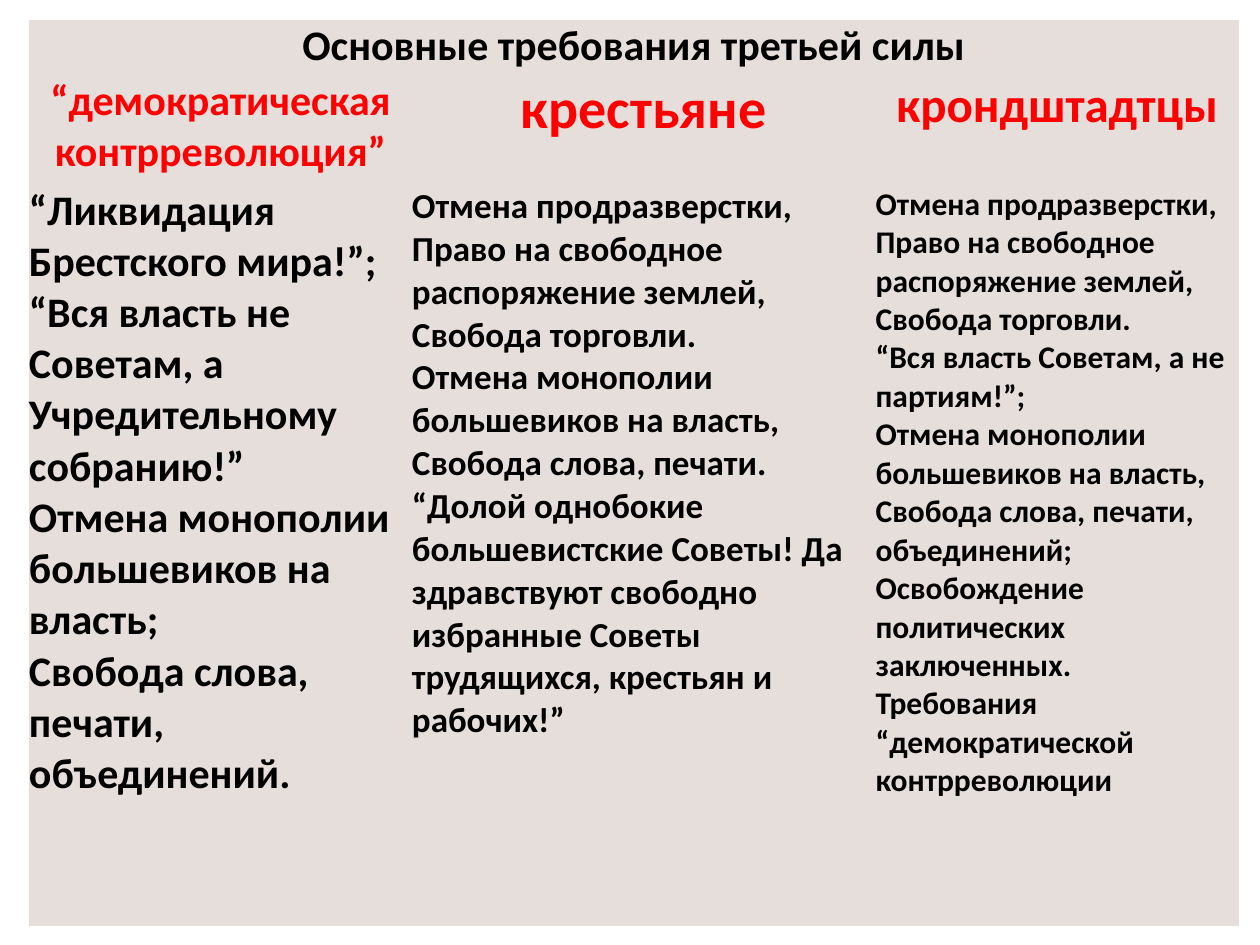
from pptx import Presentation
from pptx.dml.color import RGBColor
from pptx.enum.text import PP_ALIGN
from pptx.oxml.ns import qn
from pptx.util import Inches, Pt

BLACK = RGBColor(0x00, 0x00, 0x00)
RED = RGBColor(0xFF, 0x00, 0x00)
BEIGE = RGBColor(0xE6, 0xDE, 0xDB)
FONT = "Calibri"
NO_GRID_STYLE = "{2D5ABB26-0587-4C30-8999-92F81FD0307C}"

LEFT, TOP = 0.23, 0.16
COLUMN_WIDTHS = [3.04, 3.68, 2.88]
ROW_HEIGHTS = [0.44, 0.87, 5.88]

TITLE = "Основные требования третьей силы"
GROUPS = [
    ("“демократическая контрреволюция”", 24, 24, [
        "“Ликвидация Брестского мира!”; “Вся власть не Советам, а Учредительному собранию!”",
        "Отмена монополии большевиков на власть;",
        "Свобода слова, печати, объединений.",
    ]),
    ("крестьяне", 32, 20, [
        "Отмена продразверстки, Право на свободное распоряжение землей,",
        "Свобода торговли.",
        "Отмена монополии большевиков на власть,",
        "Свобода слова, печати.",
        "“Долой однобокие большевистские Советы! Да здравствуют свободно "
        "избранные Советы трудящихся, крестьян и рабочих!”",
    ]),
    ("крондштадтцы", 28, 18, [
        "Отмена продразверстки, Право на свободное распоряжение землей,",
        "Свобода торговли.",
        "“Вся власть Советам, а не партиям!”;",
        "Отмена монополии большевиков на власть,",
        "Свобода слова, печати, объединений;",
        "Освобождение политических заключенных.",
        "Требования “демократической контрреволюции",
    ]),
]


def write_cell(cell, *lines, size=24, color=BLACK, align=PP_ALIGN.LEFT):
    """Fill a cell with one bold paragraph for each line."""
    cell.fill.solid()
    cell.fill.fore_color.rgb = BEIGE
    cell.margin_left = cell.margin_right = cell.margin_top = cell.margin_bottom = 0
    cell.text_frame.text = "\n".join(lines)
    for paragraph in cell.text_frame.paragraphs:
        paragraph.alignment = align
        for run in paragraph.runs:
            run.font.name = FONT
            run.font.size = Pt(size)
            run.font.bold = True
            run.font.color.rgb = color


def add_plain_table(slide):
    """Add a table without borders or banding, sized by the grid."""
    frame = slide.shapes.add_table(
        len(ROW_HEIGHTS), len(COLUMN_WIDTHS), Inches(LEFT), Inches(TOP),
        Inches(sum(COLUMN_WIDTHS)), Inches(sum(ROW_HEIGHTS)))
    next(frame.element.iter(qn("a:tableStyleId"))).text = NO_GRID_STYLE
    table = frame.table
    table.first_row = table.horz_banding = False
    for column, width in zip(table.columns, COLUMN_WIDTHS):
        column.width = Inches(width)
    for row, height in zip(table.rows, ROW_HEIGHTS):
        row.height = Inches(height)
    return table


def main():
    """Build the slide with the table of demands."""
    presentation = Presentation()
    presentation.slide_width, presentation.slide_height = Inches(10), Inches(7.5)
    slide = presentation.slides.add_slide(presentation.slide_layouts[6])
    table = add_plain_table(slide)
    table.cell(0, 0).merge(table.cell(0, len(COLUMN_WIDTHS) - 1))
    write_cell(table.cell(0, 0), TITLE, align=PP_ALIGN.CENTER)
    for index, (name, name_size, demand_size, demands) in enumerate(GROUPS):
        write_cell(table.cell(1, index), name, size=name_size, color=RED,
                   align=PP_ALIGN.CENTER)
        write_cell(table.cell(2, index), *demands, size=demand_size)
    presentation.save("out.pptx")


if __name__ == "__main__":
    main()
